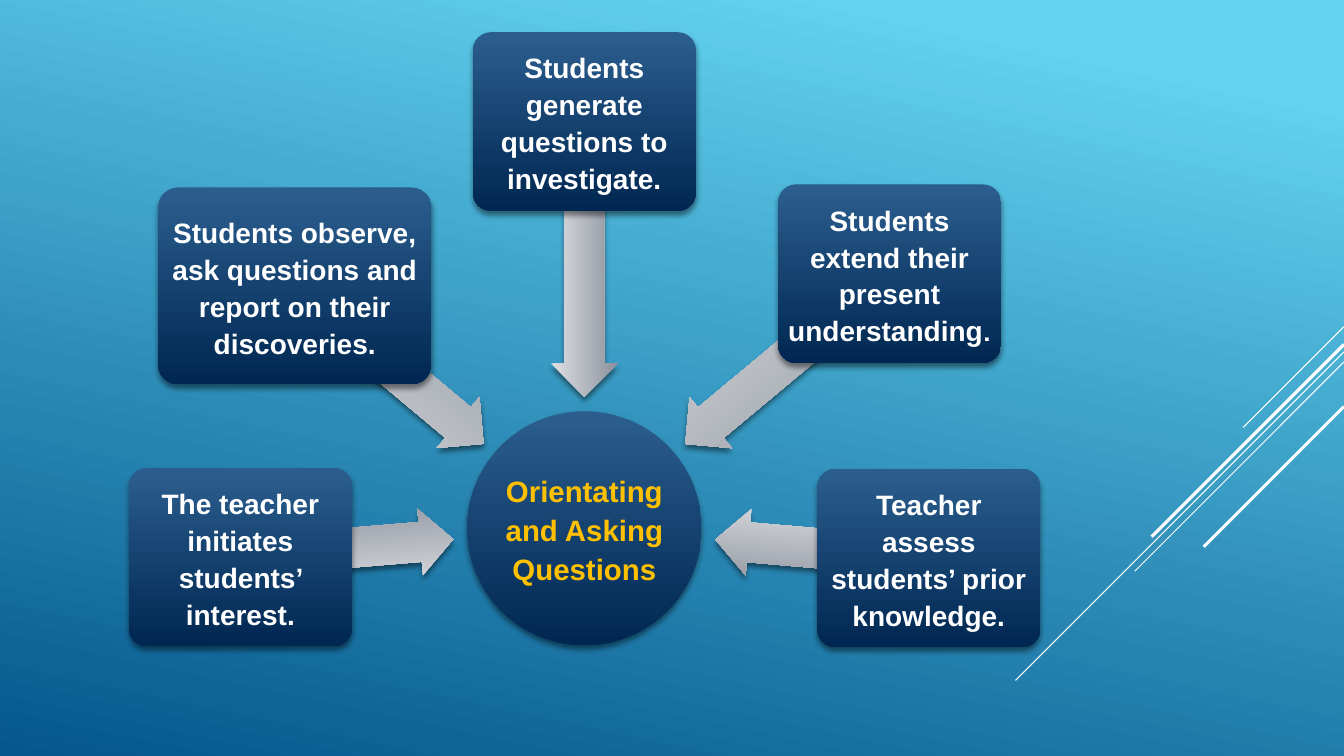
import math

import lxml.etree
import pptx
import pptx.dml.color
import pptx.enum.shapes
import pptx.enum.text
import pptx.oxml.ns
import pptx.util

COLS, ROWS = 160, 90
CELL = pptx.util.Inches(1 / 12)
KIND = pptx.enum.shapes.MSO_SHAPE
NAVY = ("2B5E8E", "002752")
SILVER = ("DEE0E4", "8D919C")

HUB = (69.57, 62.88)
HUB_SIZE = 27.84
REACH = 15.65  # from the hub's centre to each arrow tip
BOX = (26.52, 21.24)
WIDE = (32.52, 23.4)

# centre, size, text runs with their fonts
STEPS = [
    ((28.62, 66.3), BOX, [("The teacher initiates students’ interest.", "Arial")]),
    ((35.1, 34.02), WIDE,
     [("Students observe, ask questions and report on their discoveries.", "Arial")]),
    ((69.57, 14.46), BOX, [("Students generate questions to investigate.", "Arial")]),
    ((105.9, 32.58), BOX, [("Students extend their present understanding", "Arial"),
                           (".", "TeX Gyre Adventor")]),
    ((110.58, 66.42), BOX, [("Teacher assess students’ prior knowledge.", "Arial")]),
]

# start row at the right edge, run in cells, width in points
STREAKS = [(38.9, 12, 0.75), (41.9, 39.1, 0.75), (43.1, 24.9, 0.75),
           (41, 22.9, 2.25), (48.4, 16.7, 2.25)]


def grid(cells):
    return round(cells * CELL)


def paint(code):
    return pptx.dml.color.RGBColor.from_string(code)


def tag(parent, name, **attrs):
    """Add a DrawingML child element."""
    return lxml.etree.SubElement(parent, pptx.oxml.ns.qn("a:" + name), attrs)


class Board:
    def __init__(self, slide):
        self.slide = slide
        self.shapes = slide.shapes

    def blend(self, fill, pair, angle=90, start=0):
        """Fill with two colours; the angle runs clockwise."""
        fill.gradient()
        fill.gradient_angle = 360 - angle
        for stop, code, place in zip(fill.gradient_stops, pair, (start, 1)):
            stop.color.rgb = paint(code)
            stop.position = place

    def shade(self, shape):
        shape.shadow.inherit = False
        effects = shape.element.spPr.find(pptx.oxml.ns.qn("a:effectLst"))
        drop = tag(effects, "outerShdw", blurRad=str(pptx.util.Pt(4)),
                   dist=str(pptx.util.Pt(3)), dir="5400000", rotWithShape="0")
        tag(tag(drop, "srgbClr", val="000000"), "alpha", val="46000")

    def form(self, kind, centre, size, pair, adjust=()):
        """Draw a shaded shape around its centre."""
        (x, y), (wide, high) = centre, size
        shape = self.shapes.add_shape(kind, grid(x - wide / 2), grid(y - high / 2),
                                      grid(wide), grid(high))
        for index, value in enumerate(adjust):
            shape.adjustments[index] = value
        self.blend(shape.fill, pair)
        shape.line.fill.background()
        self.shade(shape)
        return shape

    def label(self, shape, runs, size, code, inset):
        frame = shape.text_frame
        frame.word_wrap = True
        frame.vertical_anchor = pptx.enum.text.MSO_ANCHOR.MIDDLE
        frame.margin_left = frame.margin_right = grid(inset)
        frame.margin_top = frame.margin_bottom = grid(inset)
        line = frame.paragraphs[0]
        line.alignment = pptx.enum.text.PP_ALIGN.CENTER
        line.line_spacing = 1.1
        for text, face in runs:
            run = line.add_run()
            run.text = text
            run.font.name = face
            run.font.size = pptx.util.Pt(size)
            run.font.bold = True
            run.font.color.rgb = paint(code)

    def hub(self, text):
        disc = self.form(KIND.OVAL, HUB, (HUB_SIZE, HUB_SIZE), NAVY)
        self.label(disc, [(text, "Arial")], 21, "FFC000", 0.12)

    def arrow(self, centre):
        """Point from a box's centre to the hub, stopping at REACH."""
        across, down = HUB[0] - centre[0], HUB[1] - centre[1]
        span = math.hypot(across, down)
        length = span - REACH
        half = length / span / 2
        middle = (centre[0] + across * half, centre[1] + down * half)
        shape = self.form(KIND.LEFT_ARROW, middle, (length, 7.92), SILVER, (0.6, 0.5))
        shape.rotation = math.degrees(math.atan2(down, across)) + 180

    def box(self, centre, size, runs):
        card = self.form(KIND.ROUNDED_RECTANGLE, centre, size, NAVY, (0.1,))
        self.label(card, runs, 20, "FFFFFF", 0.48)

    def streak(self, row, run, width):
        """Draw a diagonal line down and left from the right edge."""
        line = self.shapes.add_connector(
            pptx.enum.shapes.MSO_CONNECTOR.STRAIGHT,
            grid(COLS), grid(row), grid(COLS - run), grid(row + run))
        line.line.color.rgb = paint("FFFFFF")
        line.line.width = pptx.util.Pt(width)
        tag(line.element.spPr, "effectLst")


def main():
    deck = pptx.Presentation()
    deck.slide_width, deck.slide_height = grid(COLS), grid(ROWS)
    board = Board(deck.slides.add_slide(deck.slide_layouts[6]))
    board.blend(board.slide.background.fill, ("62D2EF", "05578D"), 102, 0.1)
    for streak in STREAKS:
        board.streak(*streak)
    board.hub("Orientating and Asking Questions")
    for centre, size, runs in STEPS:
        board.arrow(centre)
        board.box(centre, size, runs)
    deck.save("out.pptx")


if __name__ == "__main__":
    main()
